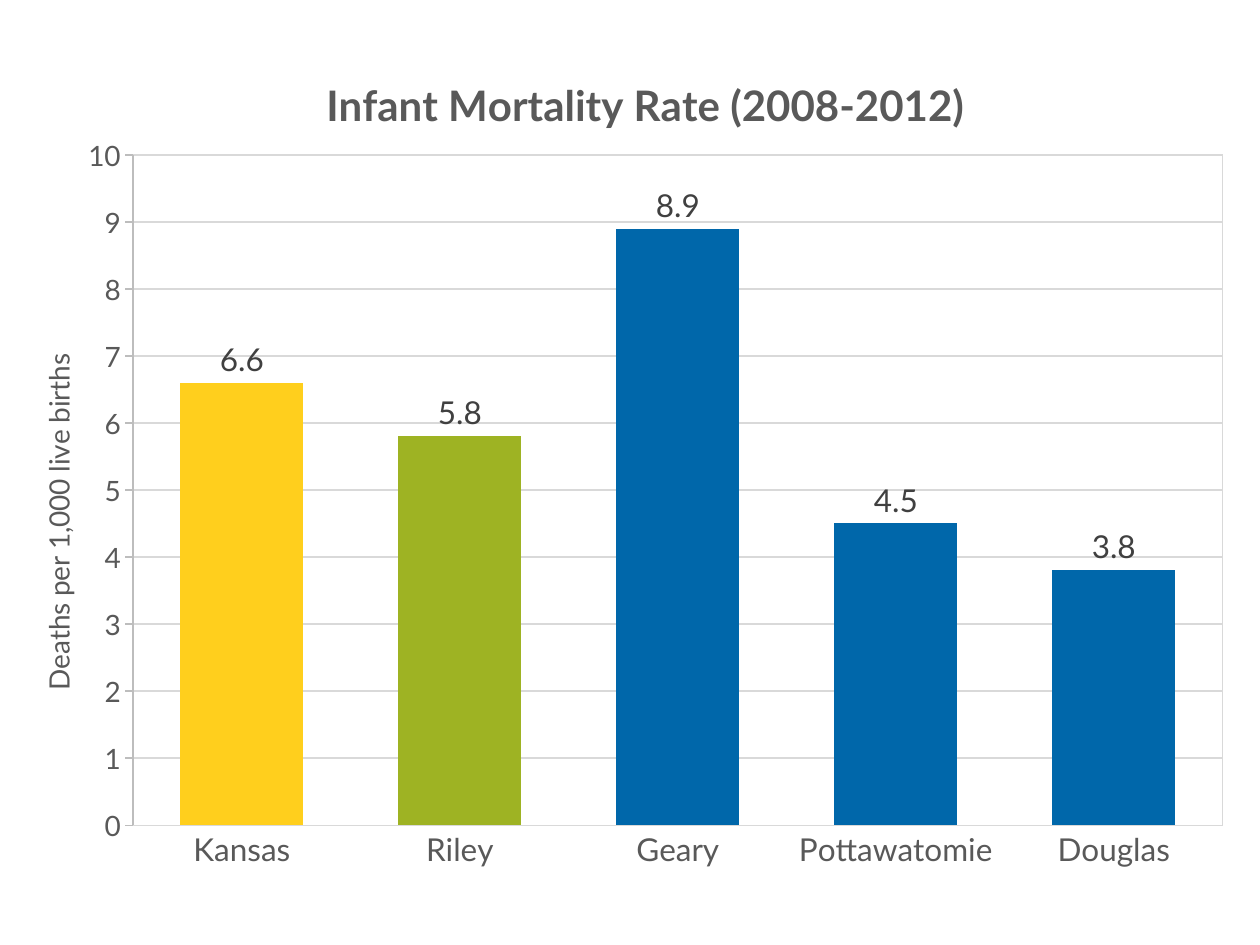
from pptx import Presentation
from pptx import util as u
from pptx.chart.data import CategoryChartData
from pptx.dml.color import RGBColor
from pptx.enum import chart as ch
from pptx.oxml import parse_xml
from pptx.oxml.ns import nsdecls, qn

COLOURS = {"state": "FFCF1D", "home": "9EB323", "county": "0067AA",
           "text": "595959", "label": "404040", "grid": "D9D9D9", "axis": "BDBDBD"}
RATES = [("Kansas", 6.6, "state"), ("Riley", 5.8, "home"), ("Geary", 8.9, "county"),
         ("Pottawatomie", 4.5, "county"), ("Douglas", 3.8, "county")]


def colour(name):
    """Return the named colour."""
    return RGBColor.from_string(COLOURS[name])


def style_font(font, size, name="text", bold=False):
    """Set face, size, colour and weight."""
    font.name, font.size, font.bold = "Lato", u.Pt(size), bold
    font.color.rgb = colour(name)


def style_line(line, name):
    """Give a line its colour and the common width."""
    line.color.rgb = colour(name)
    line.width = u.Pt(0.75)


def place(element, index, target="", **fractions):
    """Lay a chart part out at fractions of the chart."""
    for old in element.findall(qn("c:layout")):
        element.remove(old)
    modes = "".join(f'<c:{key}Mode val="edge"/>' for key in "xy")
    values = "".join(f'<c:{key} val="{value}"/>' for key, value in fractions.items())
    element.insert(index, parse_xml(
        f'<c:layout {nsdecls("c")}><c:manualLayout>{target}{modes}{values}'
        '</c:manualLayout></c:layout>'))


def add_title(owner, words, size, bold, x, y):
    """Write and place the title of a chart or axis."""
    owner.has_title = True
    title = owner.chart_title if hasattr(owner, "chart_title") else owner.axis_title
    span = title.text_frame.paragraphs[0].add_run()
    span.text = words
    style_font(span.font, size, bold=bold)
    place(title._element, 1, x=x, y=y)
    return title


def style_axes(chart):
    """Format both axes and the gridlines."""
    places, rates = chart.category_axis, chart.value_axis
    for axis, size, line, tick in (
            (places, 18, "grid", ch.XL_TICK_MARK.NONE),
            (rates, 16, "axis", ch.XL_TICK_MARK.OUTSIDE)):
        style_font(axis.tick_labels.font, size)
        style_line(axis.format.line, line)
        axis.major_tick_mark = tick
        axis.minor_tick_mark = ch.XL_TICK_MARK.NONE
    rates.minimum_scale, rates.maximum_scale, rates.major_unit = 0, 10, 1
    rates.tick_labels.number_format = "#,##0"
    rates.tick_labels.number_format_is_linked = False
    rates.has_major_gridlines = True
    style_line(rates.major_gridlines.format.line, "grid")
    title = add_title(rates, "Deaths per 1,000 live births", 16, False, 0.01, 0.36)
    body = title.text_frame._txBody.bodyPr
    body.set("rot", "-5400000")
    body.set("vert", "horz")


def style_bars(plot):
    """Colour each bar and show its value."""
    plot.gap_width = 77
    plot.vary_by_categories = False
    for index, (_, _, name) in enumerate(RATES):
        fill = plot.series[0].points[index].format.fill
        fill.solid()
        fill.fore_color.rgb = colour(name)
    labels = plot.series[0].data_labels
    labels.show_value = True
    labels.number_format = "#,##0.0"
    labels.number_format_is_linked = False
    labels.position = ch.XL_LABEL_POSITION.OUTSIDE_END
    style_font(labels.font, 18, "label")


def add_rate_chart(page, left, top, width, height):
    """Add the mortality chart within the given box."""
    data = CategoryChartData(number_format="0.0")
    data.categories = [place_name for place_name, _, _ in RATES]
    data.add_series("Series 1", [rate for _, rate, _ in RATES])
    chart = page.shapes.add_chart(
        ch.XL_CHART_TYPE.COLUMN_CLUSTERED, left, top, width, height, data).chart
    chart.has_legend = False
    chart.font.name, chart.font.size = "Calibri", u.Pt(10)
    add_title(chart, "Infant Mortality Rate (2008-2012)", 24, True, 0.24, 0.04)
    style_axes(chart)
    style_bars(chart.plots[0])
    area = chart._chartSpace.chart.plotArea
    place(area, 0, '<c:layoutTarget val="inner"/>', x=0.09, y=0.14, w=0.88, h=0.76)
    area.append(parse_xml(
        f'<c:spPr {nsdecls("c", "a")}><a:noFill/><a:ln w="9525"><a:solidFill>'
        f'<a:srgbClr val="{COLOURS["grid"]}"/></a:solidFill></a:ln></c:spPr>'))


def main():
    """Build and save the deck."""
    deck = Presentation()
    deck.slide_width, deck.slide_height = u.Inches(10), u.Inches(7.5)
    page = deck.slides.add_slide(deck.slide_layouts[6])
    add_rate_chart(page, u.Inches(0.17), u.Inches(0.25), u.Inches(9.83), u.Inches(7))
    deck.save("out.pptx")


if __name__ == "__main__":
    main()
